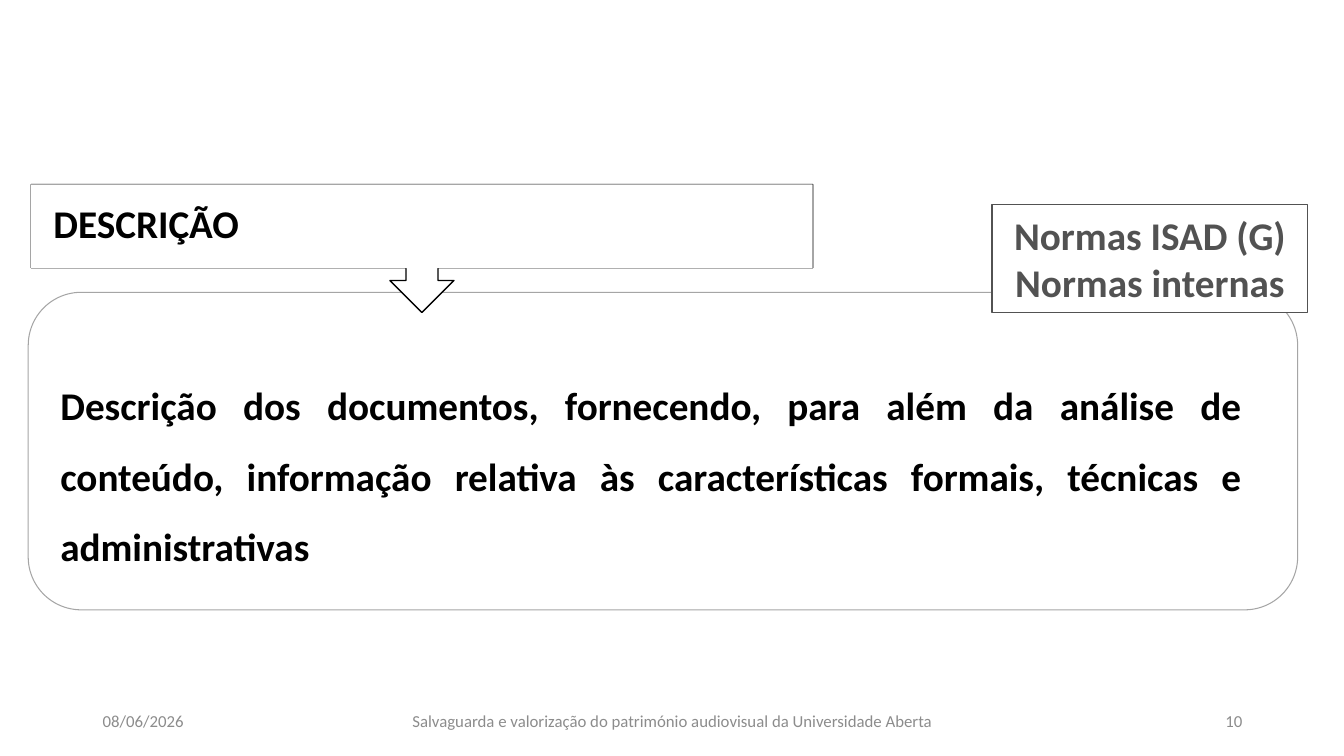
import pptx
import pptx.util
import pptx.dml.color
import pptx.enum.shapes
import pptx.enum.text

Inches, Pt = pptx.util.Inches, pptx.util.Pt
SHAPE = pptx.enum.shapes.MSO_SHAPE
ALIGN = pptx.enum.text.PP_ALIGN
ANCHOR = pptx.enum.text.MSO_ANCHOR

# Content
HEADING = "DESCRIÇÃO"
DESCRIPTION = (
    "Descrição dos documentos, fornecendo, para além da análise de conteúdo, "
    "informação relativa às características formais, técnicas e administrativas"
)
STANDARDS = ["Normas ISAD (G)", "Normas internas"]
FOOTER = [  # text, left, width, alignment
    ("08/06/2026", 0.92, 3, ALIGN.LEFT),
    ("Salvaguarda e valorização do património audiovisual da Universidade Aberta",
     3.13, 7.08, ALIGN.CENTER),
    ("10", 9.42, 3, ALIGN.RIGHT),
]

THEME = {
    "font": "Calibri", "main_size": 28, "footer_size": 12,
    "white": "FFFFFF", "ink": "000000", "standards": "525252",
    "frame": "A5A5A5", "footer": "8C8C8C",
}

# Layout
HEADING_LEFT, HEADING_TOP, HEADING_WIDTH = 0.31, 1.83, 7.75
CALLOUT_HEIGHT, HEADING_HEIGHT = 1.27, 0.83
FOOTER_TOP, FOOTER_HEIGHT = 6.95, 0.4


def colour(name):
    return pptx.dml.color.RGBColor.from_string(THEME[name])


def add_outline(kind, box, line, width, fill=None):
    shape = slide.shapes.add_shape(kind, *map(Inches, box))
    shape.shadow.inherit = False
    if fill:
        shape.fill.solid()
        shape.fill.fore_color.rgb = colour(fill)
    else:
        shape.fill.background()
    shape.line.color.rgb = colour(line)
    shape.line.width = Pt(width)
    return shape


def add_box(box):
    return slide.shapes.add_textbox(*map(Inches, box))


def write(shape, lines, ink, align, size="main_size", bold=True,
          anchor=ANCHOR.MIDDLE, spacing=None):
    frame = shape.text_frame
    frame.text = "\n".join(lines)
    frame.word_wrap = True
    frame.auto_size = pptx.enum.text.MSO_AUTO_SIZE.NONE
    frame.vertical_anchor = anchor
    for paragraph in frame.paragraphs:
        paragraph.alignment = align
        if spacing:
            paragraph.line_spacing = spacing
        for run in paragraph.runs:
            run.font.name = THEME["font"]
            run.font.size = Pt(THEME[size])
            run.font.bold = bold
            run.font.color.rgb = colour(ink)


deck = pptx.Presentation()
deck.slide_width, deck.slide_height = Inches(13.33), Inches(7.5)
slide = deck.slides.add_slide(deck.slide_layouts[5])

# Frame around the description
add_outline(SHAPE.ROUNDED_RECTANGLE, (0.28, 2.9, 12.59, 3.15), "frame", 0.75)

# Footer
for text, left, width, align in FOOTER:
    write(add_box((left, FOOTER_TOP, width, FOOTER_HEIGHT)), [text],
          "footer", align, "footer_size", bold=False)

# Callout pointing down, with the heading on its body
callout = add_outline(
    SHAPE.UP_ARROW_CALLOUT,
    (HEADING_LEFT, HEADING_TOP, HEADING_WIDTH, CALLOUT_HEIGHT), "ink", 1, "white")
callout.rotation = 180

heading = slide.shapes.title
heading.left, heading.top = Inches(HEADING_LEFT), Inches(HEADING_TOP)
heading.width, heading.height = Inches(HEADING_WIDTH), Inches(HEADING_HEIGHT)
heading.fill.solid()
heading.fill.fore_color.rgb = colour("white")
write(heading, [HEADING], "ink", ALIGN.LEFT, spacing=0.9)
for side in ("left", "top", "right", "bottom"):
    setattr(heading.text_frame, "margin_" + side, Inches(0.22))
callout._element.addnext(heading._element)  # heading sits in front of the callout

# Description
write(add_box((0.5, 3.5, 11.91, 2.22)), [DESCRIPTION], "ink", ALIGN.JUSTIFY,
      anchor=ANCHOR.TOP, spacing=1.5)

# Standards
standards = add_outline(SHAPE.RECTANGLE, (9.84, 2.03, 3.13, 1.07),
                        "standards", 1, "white")
write(standards, STANDARDS, "standards", ALIGN.CENTER)

deck.save("out.pptx")
